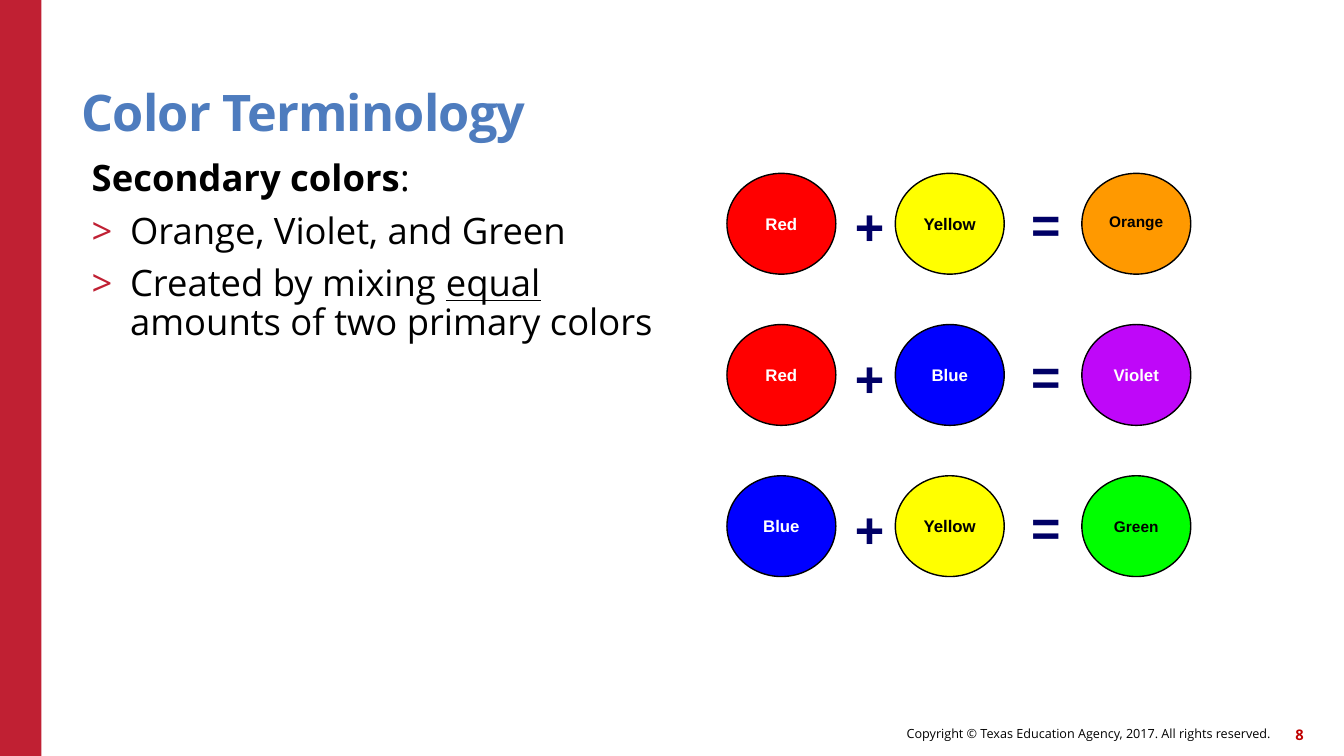
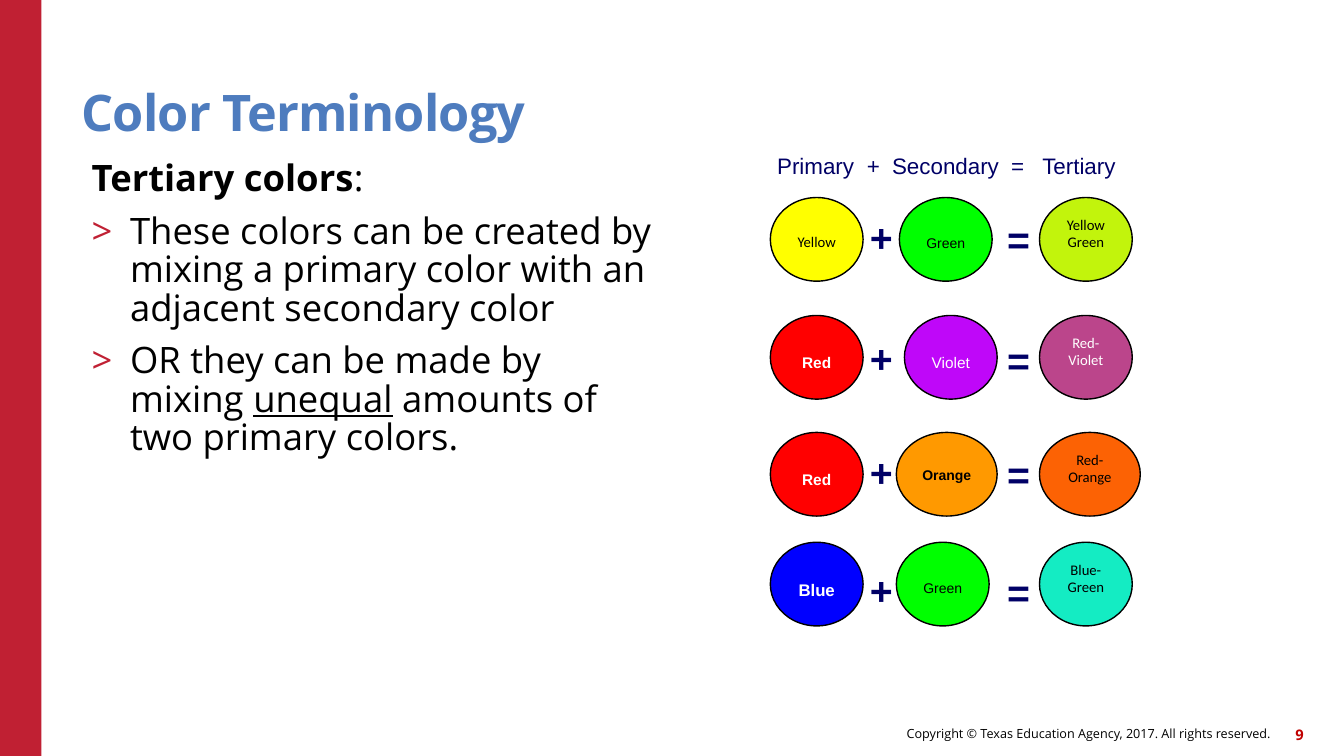
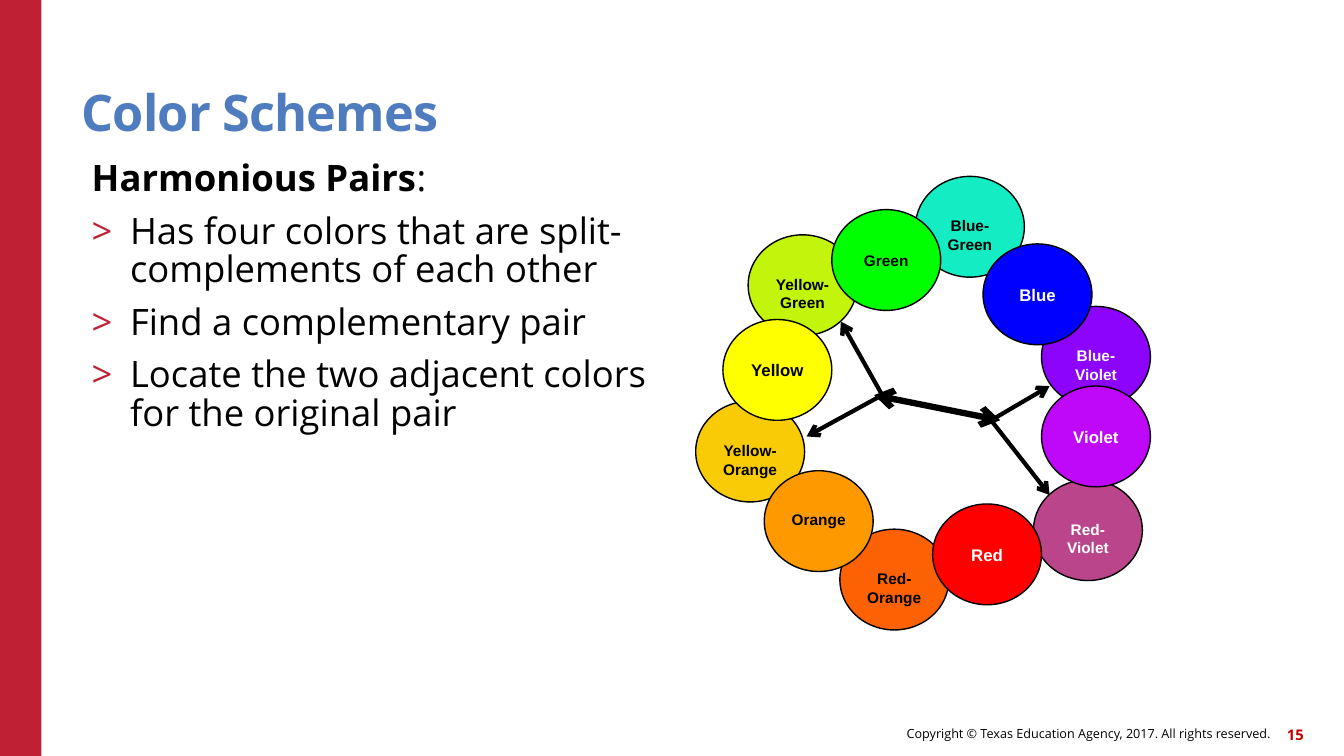
from dataclasses import dataclass

from lxml.etree import SubElement
from pptx import Presentation
from pptx.dml.color import RGBColor
from pptx.enum.shapes import MSO_CONNECTOR, MSO_SHAPE
from pptx.enum.text import MSO_ANCHOR, MSO_AUTO_SIZE, PP_ALIGN
from pptx.oxml.ns import qn
from pptx.util import Inches, Pt


@dataclass(frozen=True)
class Theme:
    heading_font: str = "Open Sans"
    label_font: str = "Arial"
    small_label_font: str = "Calibri"
    crimson: str = "C02033"
    title_blue: str = "4E7CBE"
    number_red: str = "C00000"
    navy: str = "000066"
    black: str = "000000"
    white: str = "FFFFFF"
    title_size: float = 36
    body_size: float = 26
    footer_size: float = 9
    number_size: float = 10.5
    header_size: float = 16
    large_label: float = 12
    label: float = 11
    small_label: float = 10.5
    tiny_label: float = 10


THEME = Theme()

# Fill and label colour of each hue
HUES = {
    "Red": ("FF0000", THEME.white),
    "Yellow": ("FFFF00", THEME.black),
    "Blue": ("0000FF", THEME.white),
    "Orange": ("FF9900", THEME.black),
    "Violet": ("BF07F9", THEME.white),
    "Green": ("00FF00", THEME.black),
    "Red-Orange": ("FC6204", THEME.black),
    "Yellow-Orange": ("F9CB07", THEME.black),
    "Yellow-Green": ("C2F40C", THEME.black),
    "Blue-Green": ("14ECC3", THEME.black),
    "Blue-Violet": ("8C04FC", THEME.white),
    "Red-Violet": ("BB458B", THEME.white),
}
LARGE_LABELS = ("Red", "Yellow", "Blue", "Violet")


def rgb(colour):
    return RGBColor.from_string(colour)


def place(shape, box):
    names = ("left", "top", "width", "height")
    for name, length in zip(names, box):
        setattr(shape, name, Inches(length))


def set_frame(frame, insets=(0.1, 0.05, 0.1, 0.05), anchor=MSO_ANCHOR.TOP):
    sides = ("left", "top", "right", "bottom")
    formats = {f"margin_{side}": Inches(inset) for side, inset in zip(sides, insets)}
    formats.update(word_wrap=True, auto_size=MSO_AUTO_SIZE.NONE, vertical_anchor=anchor)
    for name, value in formats.items():
        setattr(frame, name, value)


def add_span(para, text, font, size, colour, **extras):
    span = para.add_run()
    span.text = text
    span.font.color.rgb = rgb(colour)
    for name, value in {"name": font, "size": Pt(size), **extras}.items():
        setattr(span.font, name, value)
    return span


def add_text(page, box, text, font, size, colour, align=PP_ALIGN.LEFT,
             bold=False, **frame_formats):
    shape = page.shapes.add_textbox(*map(Inches, box))
    set_frame(shape.text_frame, **frame_formats)
    para = shape.text_frame.paragraphs[0]
    para.alignment = align
    add_span(para, text, font, size, colour, bold=bold)
    return para


def add_block(page, kind, box, fill, outline=None):
    shape = page.shapes.add_shape(kind, *map(Inches, box))
    shape.shadow.inherit = False
    shape.fill.solid()
    shape.fill.fore_color.rgb = rgb(fill)
    if outline:
        shape.line.color.rgb = rgb(outline)
        shape.line.width = Pt(1)
    else:
        shape.line.fill.background()
    return shape


def add_disc(page, box, hue, text=None, font=THEME.label_font, size=None,
             bold=True, drop=0):
    """Draw a labelled colour disc; drop moves its label down from the centre."""
    fill, colour = HUES[hue]
    shape = add_block(page, MSO_SHAPE.OVAL, box, fill, THEME.black)
    insets = (0.1, 0.05 + max(0, 2 * drop), 0.1, 0.05 + max(0, -2 * drop))
    set_frame(shape.text_frame, insets, MSO_ANCHOR.MIDDLE)
    para = shape.text_frame.paragraphs[0]
    para.alignment = PP_ALIGN.CENTER
    size = size or (THEME.large_label if hue in LARGE_LABELS else THEME.label)
    first, *rest = (text or hue).split("\n")
    add_span(para, first, font, size, colour, bold=bold)
    for line in rest:
        para.add_line_break()
        add_span(para, line, font, size, colour, bold=bold)


def add_sign(page, box, sign, size):
    add_text(page, box, sign, THEME.label_font, size, THEME.navy, bold=True)


def add_arrow(page, start, end, width, ends=("tailEnd",)):
    line = page.shapes.add_connector(MSO_CONNECTOR.STRAIGHT, *map(Inches, start + end))
    line.line.color.rgb = rgb(THEME.black)
    line.line.width = Pt(width)
    outline = line.line._get_or_add_ln()
    for name in ends:
        SubElement(outline, qn(f"a:{name}"), type="arrow")
    SubElement(line._element.spPr, qn("a:effectLst"))


# Shared frame: band, footer, page number, title
def add_page(deck, title, number):
    page = deck.slides.add_slide(deck.slide_layouts[1])
    add_block(page, MSO_SHAPE.RECTANGLE, (0, 0, 0.41, 7.5), THEME.crimson)
    footer = {"align": PP_ALIGN.RIGHT, "insets": (0, 0, 0, 0), "anchor": MSO_ANCHOR.MIDDLE}
    add_text(page, (6.14, 7.12, 6.46, 0.32),
             "Copyright © Texas Education Agency, 2017. All rights reserved.",
             THEME.heading_font, THEME.footer_size, THEME.black, **footer)
    add_text(page, (12.51, 7.13, 0.42, 0.32), str(number), THEME.heading_font,
             THEME.number_size, THEME.number_red, bold=True, **footer)
    heading = page.shapes.title
    place(heading, (0.81, 0.45, 11, 0.96))
    set_frame(heading.text_frame, (0, 0, 0, 0), MSO_ANCHOR.BOTTOM)
    para = heading.text_frame.paragraphs[0]
    para.alignment = PP_ALIGN.LEFT
    para.line_spacing = 0.9
    span = add_span(para, title, THEME.heading_font, THEME.title_size,
                    THEME.title_blue, bold=True)
    span._r.get_or_add_rPr().set("spc", "-60")
    return page


# Body list: a bold term, then bullets given as (text, underlined) pieces
def add_body(page, box, term, bullets):
    body = page.placeholders[1]
    place(body, box)
    frame = body.text_frame
    set_frame(frame)
    rows = [[(term, {"bold": True}), (":", {"bold": False})]]
    rows += [[(text, {"underline": lined}) for text, lined in bullet] for bullet in bullets]
    for index, pieces in enumerate(rows):
        para = frame.add_paragraph() if index else frame.paragraphs[0]
        para.line_spacing = 0.88
        para.space_before = Pt(10 if index else 0)
        properties = para._p.get_or_add_pPr()
        indent = Inches(0.38) if index else 0
        properties.set("marL", str(indent))
        properties.set("indent", str(-indent))
        if index:
            colour = SubElement(properties, qn("a:buClr"))
            SubElement(colour, qn("a:srgbClr"), val=THEME.crimson)
            SubElement(properties, qn("a:buFont"), typeface=THEME.heading_font)
            SubElement(properties, qn("a:buChar"), char=">")
        else:
            SubElement(properties, qn("a:buNone"))
        for text, extras in pieces:
            add_span(para, text, THEME.heading_font, THEME.body_size, THEME.black, **extras)


# Secondary colours: three equal rows of sums
def add_secondary_sums(page, left, top):
    sums = [("Red", "Yellow", "Orange"), ("Red", "Blue", "Violet"),
            ("Blue", "Yellow", "Green")]
    for row, hues in enumerate(sums):
        y = top + 1.5 * row
        for hue, x in zip(hues, (0, 1.67, 3.52)):
            add_disc(page, (left + x, y, 1.08, 1), hue,
                     drop=-0.02 if hue == "Orange" else 0)
        for sign, x, drop in (("+", 1.17, 0.17), ("=", 2.92, 0.15)):
            add_sign(page, (left + x, y + drop, 0.67, 0.71), sign, 36)


# Tertiary colours: a header line above four rows of sums
def add_tertiary_sums(page, left, top):
    header = add_text(page, (left - 0.03, top, 4.2, 0.37),
                      "Primary\t+\tSecondary\t=\tTertiary",
                      THEME.label_font, THEME.header_size, THEME.navy)
    stops = SubElement(header._p.get_or_add_pPr(), qn("a:tabLst"))
    for stop in (0.89, 1.14, 2.32, 2.63):
        SubElement(stops, qn("a:tab"), pos=str(Inches(stop)), algn="l")

    tiny = {"size": THEME.tiny_label, "bold": False, "drop": 0.04}
    bold = {"size": THEME.label, "drop": 0.05}
    calibri = {"font": THEME.small_label_font, "size": THEME.small_label, "bold": False}
    result = {**calibri, "drop": -0.06}
    # Row top, sign drop, then (hue, left, width, label formats) of each disc
    rows = [
        (0.5, 0.11, [("Yellow", 0, 0.92, {**calibri, "drop": 0.02}),
                     ("Green", 1.28, 0.92, tiny),
                     ("Yellow-Green", 2.67, 0.92, {**result, "text": "Yellow\nGreen"})]),
        (1.67, 0.14, [("Red", 0, 0.92, bold),
                      ("Violet", 1.33, 0.92, {**bold, "bold": False}),
                      ("Red-Violet", 2.67, 0.92, result)]),
        (2.83, 0.11, [("Red", 0, 0.92, bold),
                      ("Orange", 1.25, 1, {"size": THEME.tiny_label, "drop": 0.01}),
                      ("Red-Orange", 2.67, 1, result)]),
        (3.92, 0.19, [("Blue", 0, 0.92, {"drop": 0.06}),
                      ("Green", 1.25, 0.92, tiny),
                      ("Blue-Green", 2.67, 0.92, result)]),
    ]
    for row_top, sign_drop, discs in rows:
        y = top + row_top
        for hue, x, width, formats in discs:
            add_disc(page, (left + x, y, width, 0.83), hue, **formats)
        add_sign(page, (left + 0.89, y + sign_drop, 0.58, 0.57), "+", 28)
        add_sign(page, (left + 2.25, y + sign_drop + 0.02, 0.67, 0.57), "=", 28)


# Colour wheel: tertiary discs behind, then primary and secondary, then arrows
def add_wheel(page, left, top):
    discs = [
        ("Red-Orange", 1.43, 3.5), ("Yellow-Orange", 0, 2.23),
        ("Yellow-Green", 0.52, 0.58), ("Blue-Green", 2.18, 0),
        ("Blue-Violet", 3.43, 1.29), ("Red-Violet", 3.35, 3.01),
        ("Violet", 3.43, 2.08), ("Blue", 2.85, 0.67), ("Green", 1.35, 0.33),
        ("Yellow", 0.27, 1.42), ("Red", 2.35, 3.25), ("Orange", 0.68, 2.92),
    ]
    for hue, x, y in discs:
        drop = 0.08 if "-" in hue else -0.02 if hue == "Orange" else 0
        add_disc(page, (left + x, top + y, 1.08, 1), hue, drop=drop)

    def point(x, y):
        return left + x, top + y

    add_arrow(page, point(1.77, 2.17), point(3.02, 2.42), 4.5, ("headEnd", "tailEnd"))
    forks = [((1.85, 2.17), [(1.44, 1.44), (1.1, 2.58)]),
             ((2.93, 2.42), [(3.51, 2.08), (3.51, 3.16)])]
    for start, tips in forks:
        for tip in tips:
            add_arrow(page, point(*start), point(*tip), 3)


def main():
    deck = Presentation()
    deck.slide_width, deck.slide_height = Inches(13.33), Inches(7.5)
    slides = [
        ("Color Terminology", 8, "Secondary colors", [
            [("Orange, Violet, and Green", False)],
            [("Created by mixing ", False), ("equal", True),
             (" amounts of two primary colors", False)],
        ], add_secondary_sums, (7.21, 1.72)),
        ("Color Terminology", 9, "Tertiary colors", [
            [("These colors can be created by mixing a primary color with an "
              "adjacent secondary color", False)],
            [("OR they can be made by mixing ", False), ("unequal", True),
             (" amounts of two primary colors.", False)],
        ], add_tertiary_sums, (7.64, 1.46)),
        ("Color Schemes", 15, "Harmonious Pairs", [
            [("Has four colors that are split-complements of each other", False)],
            [("Find a complementary pair", False)],
            [("Locate the two adjacent colors for the original pair", False)],
        ], add_wheel, (6.9, 1.75)),
    ]
    for title, number, term, bullets, add_diagram, corner in slides:
        page = add_page(deck, title, number)
        add_body(page, (0.81, 1.55, 5.86, 5.18), term, bullets)
        add_diagram(page, *corner)
    deck.save("out.pptx")


if __name__ == "__main__":
    main()
